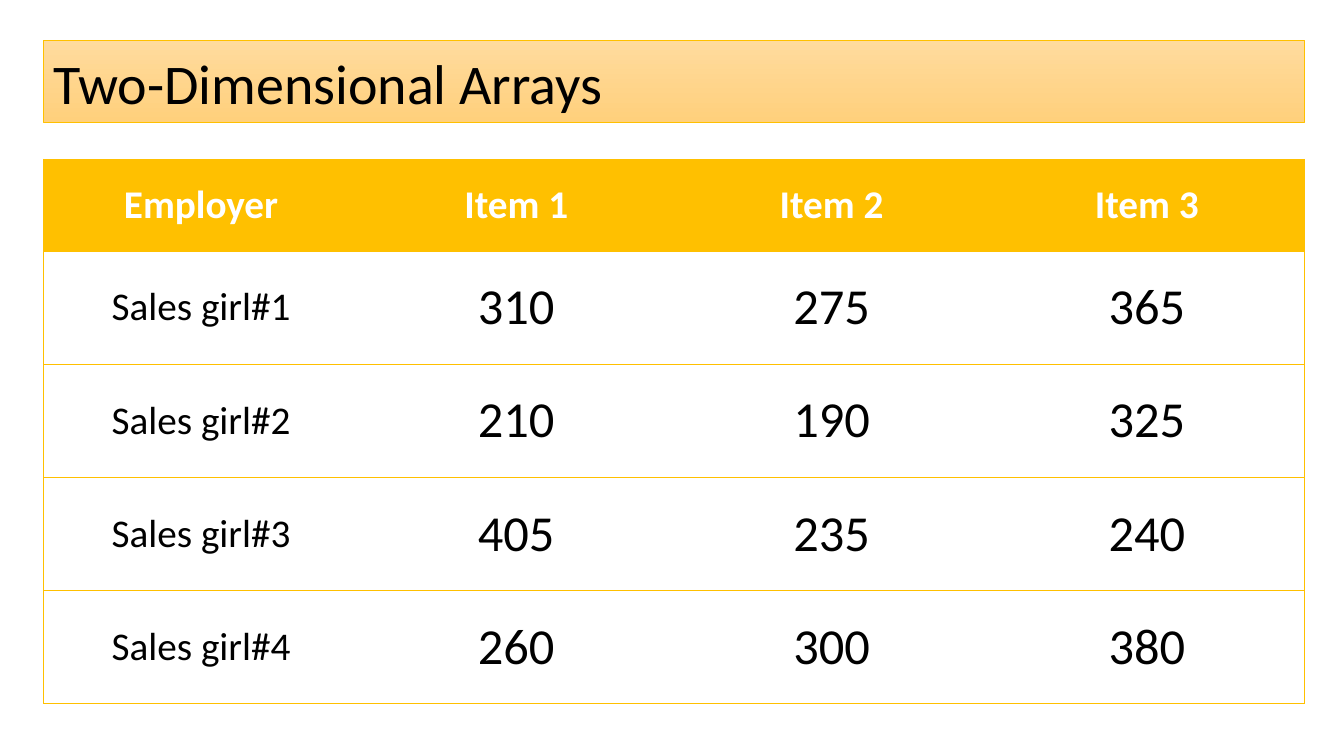
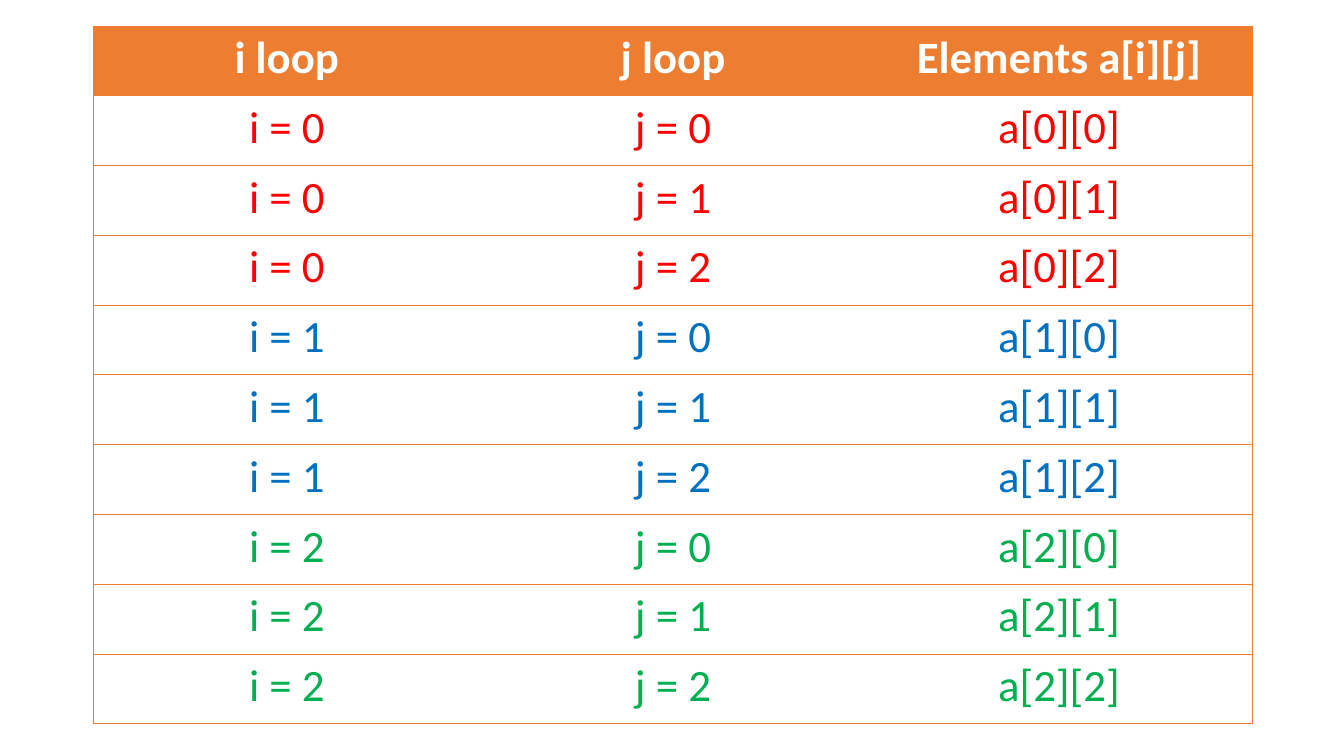
from dataclasses import dataclass

from lxml import etree
from pptx import Presentation
from pptx.dml.color import RGBColor
from pptx.enum import text
from pptx.oxml.ns import qn
from pptx.slide import Slide
from pptx.table import _Cell
from pptx.util import Inches, Pt

FONT = "Calibri"
BLACK = RGBColor(0x00, 0x00, 0x00)
WHITE = RGBColor(0xFF, 0xFF, 0xFF)
GOLD = RGBColor(0xFF, 0xC0, 0x00)
PALE_GOLD = RGBColor(0xFF, 0xDB, 0x9E)
SOFT_GOLD = RGBColor(0xFF, 0xD0, 0x7C)
ORANGE = RGBColor(0xED, 0x7D, 0x31)
RED = RGBColor(0xFF, 0x00, 0x00)
BLUE = RGBColor(0x00, 0x70, 0xC0)
GREEN = RGBColor(0x00, 0xB0, 0x50)

LINE_WIDTH = Pt(0.5)
PLAIN_TABLE_STYLE = "{2D5ABB26-0587-4C30-8999-92F81FD0307C}"
TITLE_LAYOUT, BLANK_LAYOUT = 5, 6


@dataclass
class Row:
    values: list[str]
    color: RGBColor = BLACK


@dataclass
class Grid:
    left: float
    top: float
    width: float
    height: float
    header_height: float
    accent: RGBColor
    header: list[str]
    rows: list[Row]
    label_size: int
    value_size: int
    anchor: text.MSO_ANCHOR


SALES = Grid(
    0.43, 1.58, 12.51, 5.4, 0.91, GOLD,
    ["Employer", "Item 1", "Item 2", "Item 3"],
    [
        Row(["Sales girl#1", "310", "275", "365"]),
        Row(["Sales girl#2", "210", "190", "325"]),
        Row(["Sales girl#3", "405", "235", "240"]),
        Row(["Sales girl#4", "260", "300", "380"]),
    ],
    28, 36, text.MSO_ANCHOR.MIDDLE,
)

LOOPS = Grid(
    0.93, 0.26, 11.49, 6.92, 0.69, ORANGE,
    ["i loop", "j loop", "Elements a[i][j]"],
    [
        Row([f"i = {i}", f"j = {j}", f"a[{i}][{j}]"], color)
        for i, color in enumerate((RED, BLUE, GREEN))
        for j in range(3)
    ],
    32, 32, text.MSO_ANCHOR.TOP,
)


def add_title(s: Slide, title: str) -> None:
    sp = s.shapes.title
    sp.left, sp.top = Inches(0.43), Inches(0.4)
    sp.width, sp.height = Inches(12.51), Inches(0.81)
    sp.fill.gradient()
    sp.fill.gradient_angle = 270
    for stop, color in zip(sp.fill.gradient_stops, (PALE_GOLD, SOFT_GOLD)):
        stop.color.rgb = color
    sp.line.color.rgb = GOLD
    sp.line.width = LINE_WIDTH

    tf = sp.text_frame
    tf.text = title
    tf.auto_size = text.MSO_AUTO_SIZE.NONE
    tf.vertical_anchor = text.MSO_ANCHOR.BOTTOM
    p = tf.paragraphs[0]
    p.alignment = text.PP_ALIGN.LEFT
    p.line_spacing = 0.9
    p.font.name, p.font.size = FONT, Pt(40)
    p.font.color.rgb = BLACK


def add_borders(cell: _Cell, sides: str, color: RGBColor) -> None:
    """Draw the given sides, a string of letters in the order L, R, T, B."""
    props = cell._tc.get_or_add_tcPr()
    for side in sides:
        ln = etree.SubElement(props, qn(f"a:ln{side}"), w=str(LINE_WIDTH))
        fill = etree.SubElement(ln, qn("a:solidFill"))
        etree.SubElement(fill, qn("a:srgbClr"), val=str(color))


def write_cell(cell: _Cell, value: str, size: int, color: RGBColor,
               bold: bool, anchor: text.MSO_ANCHOR) -> None:
    cell.text = value
    cell.vertical_anchor = anchor
    p = cell.text_frame.paragraphs[0]
    p.alignment = text.PP_ALIGN.CENTER
    p.font.name, p.font.size, p.font.bold = FONT, Pt(size), bold
    p.font.color.rgb = color


def add_grid(s: Slide, grid: Grid) -> None:
    rows = [Row(grid.header, WHITE), *grid.rows]
    last = len(grid.header) - 1
    frame = s.shapes.add_table(
        len(rows), len(grid.header), Inches(grid.left), Inches(grid.top),
        Inches(grid.width), Inches(grid.height))
    table = frame.table
    table.horz_banding = False
    table._tbl.tblPr.find(qn("a:tableStyleId")).text = PLAIN_TABLE_STYLE

    body_height = (grid.height - grid.header_height) / len(grid.rows)
    for r, row in enumerate(rows):
        is_header = r == 0
        table.rows[r].height = Inches(grid.header_height if is_header else body_height)
        for c, value in enumerate(row.values):
            cell = table.cell(r, c)
            size = grid.label_size if is_header or c == 0 else grid.value_size
            write_cell(cell, value, size, row.color, is_header, grid.anchor)
            sides = ("L" if c == 0 else "") + ("R" if c == last else "") + "TB"
            add_borders(cell, sides, grid.accent)
            if is_header:
                cell.fill.solid()
                cell.fill.fore_color.rgb = grid.accent
            else:
                cell.fill.background()


def main() -> None:
    prs = Presentation()
    prs.slide_width, prs.slide_height = Inches(13.33), Inches(7.5)

    s = prs.slides.add_slide(prs.slide_layouts[TITLE_LAYOUT])
    add_title(s, "Two-Dimensional Arrays")
    add_grid(s, SALES)

    s = prs.slides.add_slide(prs.slide_layouts[BLANK_LAYOUT])
    add_grid(s, LOOPS)

    prs.save("out.pptx")


if __name__ == "__main__":
    main()
